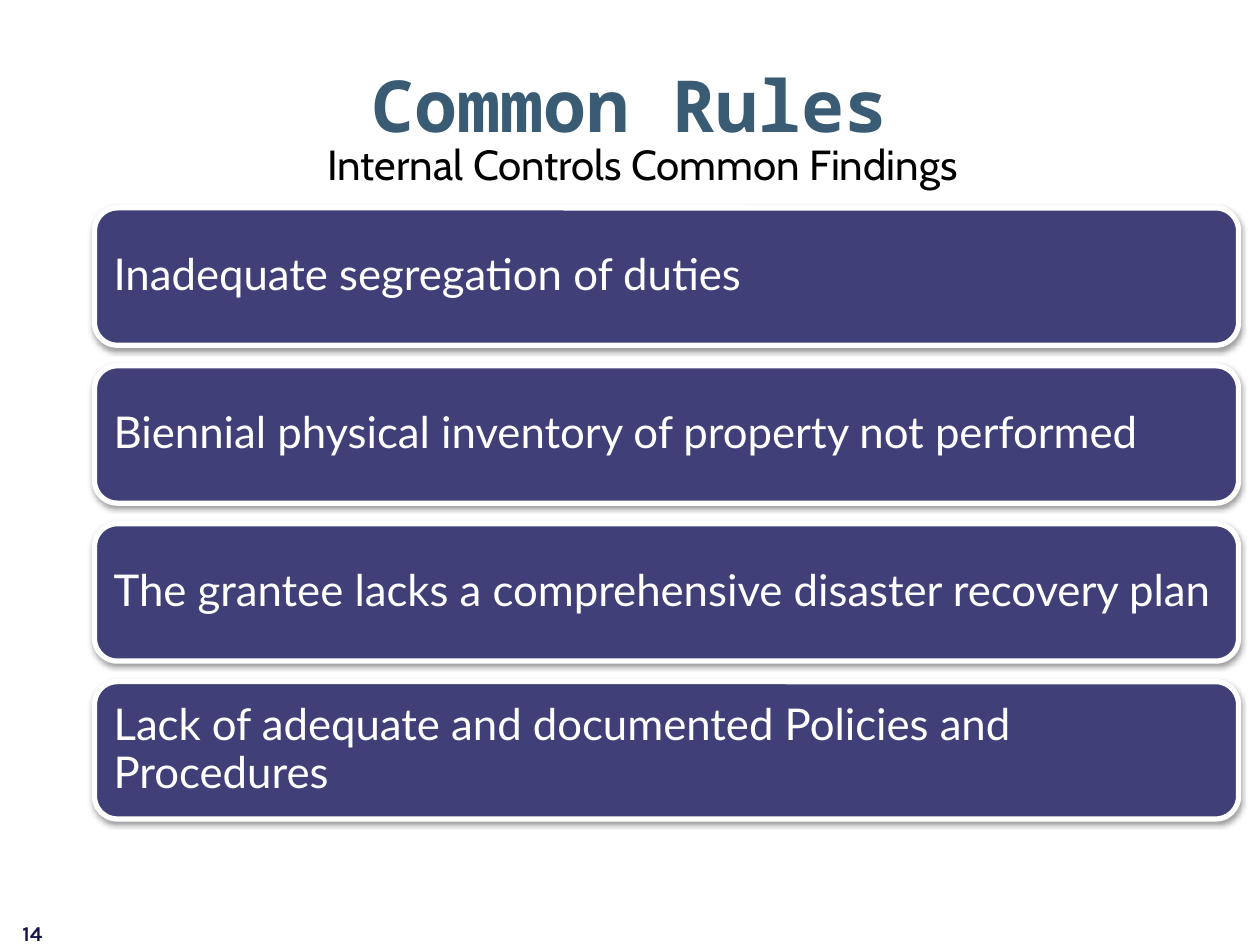
from dataclasses import dataclass

from lxml import etree
from pptx import Presentation
from pptx.dml.color import RGBColor
from pptx.enum.shapes import MSO_SHAPE
from pptx.enum.text import MSO_ANCHOR, PP_ALIGN
from pptx.oxml import parse_xml
from pptx.oxml.ns import nsdecls
from pptx.shapes.autoshape import Shape
from pptx.slide import Slide
from pptx.util import Inches, Pt

ROUNDED = MSO_SHAPE.ROUNDED_RECTANGLE
TOP, MIDDLE = MSO_ANCHOR.TOP, MSO_ANCHOR.MIDDLE
LEFT, CENTER = PP_ALIGN.LEFT, PP_ALIGN.CENTER


@dataclass(frozen=True)
class Theme:
    title_color: str = "395B74"
    subtitle_color: str = "000000"
    number_color: str = "17144D"
    card_fill: str = "413F77"
    card_text: str = "FFFFFF"
    card_line: str = "FFFFFF"
    title_size: int = 41
    subtitle_size: int = 24
    card_size: int = 25
    number_size: int = 12
    title_font: str = "Noto Sans Mono"
    subtitle_font: str = "Cabin"
    card_font: str = "Lato"
    number_font: str = "Karla"


@dataclass(frozen=True)
class Box:
    left: float
    top: float
    width: float
    height: float

    def lengths(self) -> tuple:
        return tuple(map(Inches, (self.left, self.top, self.width, self.height)))


THEME = Theme()
FINDINGS = (
    "Inadequate segregation of duties",
    "Biennial physical inventory of property not performed",
    "The grantee lacks a comprehensive disaster recovery plan",
    "Lack of adequate and documented Policies and Procedures",
)
FIRST_CARD = Box(0.75, 1.65, 9.08, 1.09)
LAST_CARD_TOP = 5.41


def write_text(shape: Shape, text: str, *, font: str, size: int, color: str,
               bold: bool = False, align=LEFT, anchor=TOP,
               inset_top: float = 0.05, line_spacing: float = 1.0) -> None:
    frame = shape.text_frame
    frame.word_wrap = True
    frame.vertical_anchor = anchor
    frame.margin_left = frame.margin_right = Inches(0.1)
    frame.margin_top = Inches(inset_top)
    frame.margin_bottom = Inches(0.05)
    paragraph = frame.paragraphs[0]
    paragraph.alignment = align
    paragraph.line_spacing = line_spacing
    run = paragraph.add_run()
    run.text = text
    run.font.name = font
    run.font.size = Pt(size)
    run.font.bold = bold
    run.font.color.rgb = RGBColor.from_string(color)


def add_soft_shadow(shape: Shape) -> None:
    shape.shadow.inherit = False
    effects = shape.element.spPr.find(
        "{http://schemas.openxmlformats.org/drawingml/2006/main}effectLst")
    shadow: etree.ElementBase = parse_xml(
        f'<a:outerShdw {nsdecls("a")} blurRad="{Pt(3.1)}" dist="{Pt(1.6)}" '
        'dir="5400000" rotWithShape="0"><a:srgbClr val="000000">'
        '<a:alpha val="38000"/></a:srgbClr></a:outerShdw>')
    effects.append(shadow)


def add_card(slide: Slide, box: Box, text: str) -> None:
    card = slide.shapes.add_shape(ROUNDED, *box.lengths())
    card.fill.solid()
    card.fill.fore_color.rgb = RGBColor.from_string(THEME.card_fill)
    card.line.color.rgb = RGBColor.from_string(THEME.card_line)
    card.line.width = Pt(3)
    add_soft_shadow(card)
    write_text(card, text, font=THEME.card_font, size=THEME.card_size,
               color=THEME.card_text, anchor=MIDDLE, line_spacing=0.9)


def add_label(slide: Slide, box: Box, text: str, **text_format) -> None:
    write_text(slide.shapes.add_textbox(*box.lengths()), text, **text_format)


def main() -> None:
    presentation = Presentation()
    presentation.slide_width = Inches(10)
    presentation.slide_height = Inches(7.5)
    slide = presentation.slides.add_slide(presentation.slide_layouts[6])

    # Finding cards, evenly spaced
    pitch = (LAST_CARD_TOP - FIRST_CARD.top) / (len(FINDINGS) - 1)
    for index, finding in enumerate(FINDINGS):
        box = Box(FIRST_CARD.left, FIRST_CARD.top + index * pitch,
                  FIRST_CARD.width, FIRST_CARD.height)
        add_card(slide, box, finding)

    # Headings
    add_label(slide, Box(1.06, 1.05, 8.08, 0.5),
              "Internal Controls Common Findings", font=THEME.subtitle_font,
              size=THEME.subtitle_size, color=THEME.subtitle_color, align=CENTER)
    add_label(slide, Box(0.5, 0.48, 9, 1.07), "Common Rules",
              font=THEME.title_font, size=THEME.title_size,
              color=THEME.title_color, bold=True, align=CENTER, inset_top=0)

    # Slide number
    add_label(slide, Box(0.08, 7.26, 2.33, 0.4), "14", font=THEME.number_font,
              size=THEME.number_size, color=THEME.number_color, bold=True)

    presentation.save("out.pptx")


if __name__ == "__main__":
    main()
